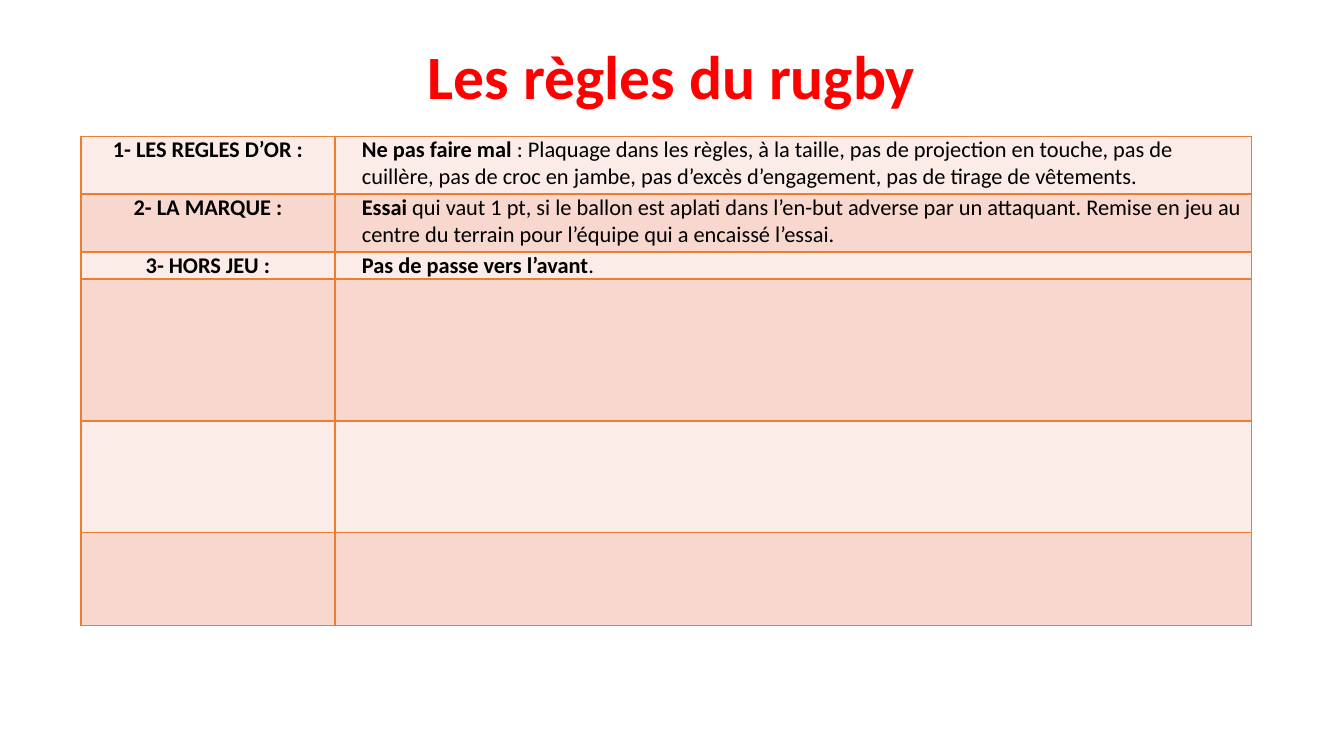
from dataclasses import dataclass

from lxml.etree import SubElement
from pptx import Presentation
from pptx.dml.color import RGBColor
from pptx.enum.text import MSO_ANCHOR as Anchor, PP_ALIGN as Align
from pptx.oxml.ns import qn
from pptx.table import _Cell as Cell
from pptx.util import Cm, Pt

COLORS = {
    "title": "FF0000",
    "text": "000000",
    "border": "ED7D31",
    "light": "FCECE8",
    "dark": "F8D7CE",
}
FONT = "Calibri"


@dataclass
class Rule:
    height: float
    heading: str = ""
    key: str = ""
    detail: str = ""


RULES = [
    Rule(1.46, "1- LES REGLES D’OR :", "Ne pas faire mal",
         " : Plaquage dans les règles, à la taille, pas de projection en touche, "
         "pas de cuillère, pas de croc en jambe, pas d’excès d’engagement, "
         "pas de tirage de vêtements."),
    Rule(1.46, "2- LA MARQUE :", "Essai",
         " qui vaut 1 pt, si le ballon est aplati dans l’en-but adverse par un "
         "attaquant. Remise en jeu au centre du terrain pour l’équipe qui a "
         "encaissé l’essai."),
    Rule(0.48, "3- HORS JEU :", "Pas de passe vers l’avant", "."),
    Rule(3.58),
    Rule(2.82),
    Rule(2.34),
]
COLUMN_WIDTHS = (6.4, 23.09)


def write_text(paragraph, text: str, *, size: float = 16, color: str = "text",
               bold: bool = True) -> None:
    run = paragraph.add_run()
    run.text = text
    run.font.name = FONT
    run.font.size = Pt(size)
    run.font.bold = bold
    run.font.color.rgb = RGBColor.from_string(COLORS[color])


def style_cell(cell: Cell, fill: str) -> None:
    cell.margin_left = cell.margin_right = Cm(0.18)
    cell.margin_top = cell.margin_bottom = 0
    properties = cell._tc.get_or_add_tcPr()
    for side in ("lnL", "lnR", "lnT", "lnB"):
        line = SubElement(properties, qn(f"a:{side}"), w=str(Pt(1)))
        line_fill = SubElement(line, qn("a:solidFill"))
        SubElement(line_fill, qn("a:srgbClr"), val=COLORS["border"])
    cell.fill.solid()
    cell.fill.fore_color.rgb = RGBColor.from_string(COLORS[fill])


def fill_row(heading_cell: Cell, detail_cell: Cell, rule: Rule) -> None:
    heading = heading_cell.text_frame.paragraphs[0]
    heading.alignment = Align.CENTER
    heading.space_before = Pt(6)
    write_text(heading, rule.heading)

    detail = detail_cell.text_frame.paragraphs[0]
    detail.space_before = Pt(6)
    detail._p.get_or_add_pPr().set("marL", str(Cm(0.5)))
    write_text(detail, rule.key)
    write_text(detail, rule.detail, bold=False)


def add_title(slide, text: str) -> None:
    shape = slide.shapes.add_textbox(Cm(2.33), Cm(1.02), Cm(29.21), Cm(1.98))
    frame = shape.text_frame
    frame.word_wrap = True
    frame.vertical_anchor = Anchor.MIDDLE
    paragraph = frame.paragraphs[0]
    paragraph.alignment = Align.CENTER
    paragraph.line_spacing = 0.9
    write_text(paragraph, text, size=44, color="title")


def add_rules_table(slide, rules: list[Rule]) -> None:
    shape = slide.shapes.add_table(
        len(rules), len(COLUMN_WIDTHS), Cm(2.04), Cm(3.43),
        Cm(sum(COLUMN_WIDTHS)), Cm(sum(rule.height for rule in rules)))
    table = shape.table
    table.first_row = table.horz_banding = False
    for column, width in zip(table.columns, COLUMN_WIDTHS):
        column.width = Cm(width)
    for index, (row, rule) in enumerate(zip(table.rows, rules)):
        row.height = Cm(rule.height)
        for cell in row.cells:
            style_cell(cell, "dark" if index % 2 else "light")
        if rule.heading:
            fill_row(*row.cells, rule)


def main() -> None:
    presentation = Presentation()
    presentation.slide_width = Cm(33.87)
    presentation.slide_height = Cm(19.05)
    slide = presentation.slides.add_slide(presentation.slide_layouts[6])

    # Title
    add_title(slide, "Les règles du rugby")

    # Table of rules
    add_rules_table(slide, RULES)

    presentation.save("out.pptx")


if __name__ == "__main__":
    main()
